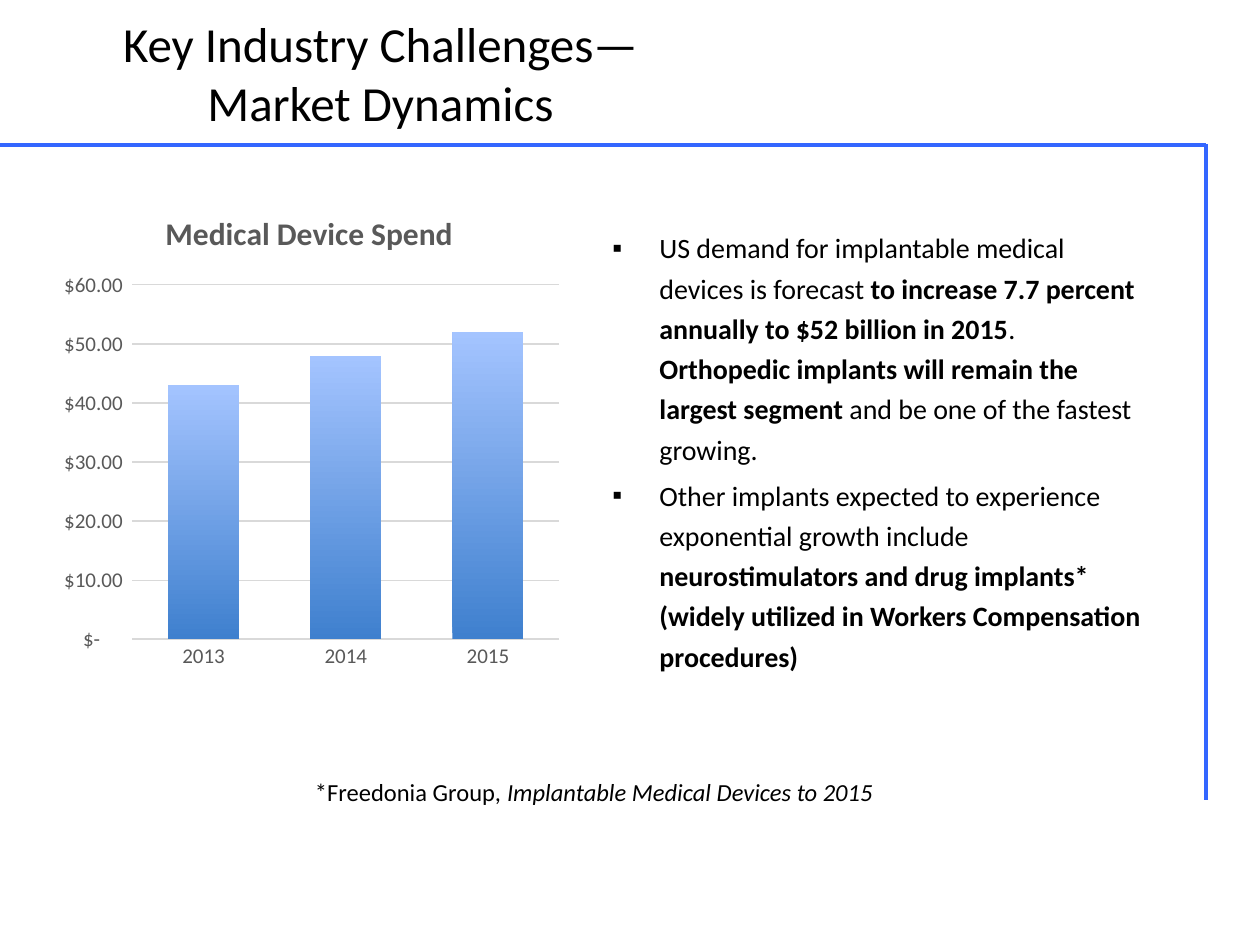
from dataclasses import dataclass

from lxml.etree import SubElement
from pptx import Presentation
from pptx.chart.data import CategoryChartData
from pptx.dml.color import RGBColor
from pptx.enum.chart import XL_CHART_TYPE as ChartType, XL_TICK_MARK as TickMark
from pptx.enum.text import MSO_ANCHOR as Anchor, MSO_AUTO_SIZE as AutoSize, PP_ALIGN as Align
from pptx.oxml.ns import qn
from pptx.util import Cm, Pt

COLORS = {
    "text": "000000",
    "rule": "3366FF",
    "label": "595959",
    "grid": "D9D9D9",
    "bar_bottom": "3F80CE",
    "bar_top": "A4C4FF",
}
DOLLARS = r'_("$"* #,##0.00_);_("$"* \(#,##0.00\);_("$"* "-"??_);_(@_)'


@dataclass
class Rule:
    x1: float
    y1: float
    x2: float
    y2: float


@dataclass
class Span:
    text: str
    bold: bool = False
    italic: bool = False


RULES = [Rule(0, 2.92, 24.31, 2.92), Rule(24.31, 2.9, 24.31, 16.13)]

BULLETS = [
    [
        Span("US demand for implantable medical devices is forecast "),
        Span("to increase 7.7 percent annually to $52 billion in 2015", bold=True),
        Span(". "),
        Span("Orthopedic implants will remain the largest segment", bold=True),
        Span(" and be one of the fastest growing."),
    ],
    [
        Span("Other implants expected to experience exponential growth include "),
        Span("neurostimulators and drug implants* (widely utilized in "
             "Workers Compensation procedures)", bold=True),
    ],
]
FOOTNOTE = [Span("*Freedonia Group, "), Span("Implantable Medical Devices to 2015", italic=True)]


def color(name: str) -> RGBColor:
    return RGBColor.from_string(COLORS[name])


def style_font(font, size: int, color_name: str = "text", bold: bool = False,
               italic: bool = False) -> None:
    values = {"name": "Calibri", "size": Pt(size), "bold": bold, "italic": italic}
    for key, value in values.items():
        setattr(font, key, value)
    font.color.rgb = color(color_name)


def place(shape, left: float, top: float, width: float, height: float) -> None:
    values = {"left": left, "top": top, "width": width, "height": height}
    for key, value in values.items():
        setattr(shape, key, Cm(value))


def write_spans(para, spans: list[Span], size: int) -> None:
    for span in spans:
        run = para.add_run()
        run.text = span.text
        style_font(run.font, size, bold=span.bold, italic=span.italic)


def draw_rule(page, rule: Rule) -> None:
    line = page.shapes.add_connector(1, Cm(rule.x1), Cm(rule.y1), Cm(rule.x2), Cm(rule.y2))
    line.line.color.rgb = color("rule")
    line.line.width = Pt(2)
    SubElement(line.element.spPr, qn("a:effectLst"))


def set_bullet(para, char: str, indent: float) -> None:
    props = para._p.get_or_add_pPr()
    props.set("marL", str(Cm(indent)))
    props.set("indent", str(-Cm(indent)))
    SubElement(props, qn("a:buFont"), typeface="Arial")
    SubElement(props, qn("a:buChar"), char=char)


def fill_title(box) -> None:
    place(box, 0, 0, 15.34, 2.92)
    frame = box.text_frame
    frame.auto_size = AutoSize.NONE
    frame.vertical_anchor = Anchor.MIDDLE
    frame.text = "Key Industry Challenges—\vMarket Dynamics"
    para = frame.paragraphs[0]
    para.alignment = Align.CENTER
    for run in para.runs:
        style_font(run.font, 28)


def fill_body(box) -> None:
    place(box, 12.09, 4.39, 11.3, 10.74)
    frame = box.text_frame
    frame.auto_size = AutoSize.NONE
    for index, spans in enumerate(BULLETS):
        para = frame.add_paragraph() if index else frame.paragraphs[0]
        set_bullet(para, "▪", 0.95)
        para.line_spacing = 1.2
        para.space_before = Pt(3.2 if index else 0)
        write_spans(para, spans, 16)


def add_footnote(page) -> None:
    box = page.shapes.add_textbox(Cm(6.1), Cm(15.54), Cm(15.6), Cm(0.86))
    box.text_frame.word_wrap = True
    write_spans(box.text_frame.paragraphs[0], FOOTNOTE, 14)


def add_spend_chart(page) -> None:
    name = "Medical Device Spend"
    data = CategoryChartData()
    data.categories = ["2013", "2014", "2015"]
    data.add_series(name, [43, 48, 52])
    chart = page.shapes.add_chart(ChartType.COLUMN_CLUSTERED, Cm(0.99), Cm(3.81),
                                  Cm(10.49), Cm(9.88), data).chart
    style_font(chart.font, 10)
    chart.has_legend = False
    chart.has_title = True
    title = chart.chart_title.text_frame
    title.text = name
    style_font(title.paragraphs[0].runs[0].font, 18, "label", bold=True)

    for axis in (chart.category_axis, chart.value_axis):
        axis.major_tick_mark = axis.minor_tick_mark = TickMark.NONE
        style_font(axis.tick_labels.font, 12, "label")
    chart.category_axis.format.line.color.rgb = color("grid")
    chart.category_axis.format.line.width = Pt(1)

    values = chart.value_axis
    scale = {"minimum_scale": 0, "maximum_scale": 60, "major_unit": 10}
    for key, value in scale.items():
        setattr(values, key, value)
    values.format.line.fill.background()
    values.major_gridlines.format.line.color.rgb = color("grid")
    values.major_gridlines.format.line.width = Pt(0.75)
    values.tick_labels.number_format = DOLLARS
    values.tick_labels.number_format_is_linked = False

    plot = chart.plots[0]
    plot.vary_by_categories = False
    plot.gap_width = 100
    plot.overlap = -24
    fill = plot.series[0].format.fill
    fill.gradient()
    fill.gradient_angle = 90
    for stop, color_name in zip(fill.gradient_stops, ("bar_bottom", "bar_top")):
        stop.color.rgb = color(color_name)


def main() -> None:
    deck = Presentation()
    deck.slide_width, deck.slide_height = Cm(25.4), Cm(19.05)
    page = deck.slides.add_slide(deck.slide_layouts[1])
    for rule in RULES:
        draw_rule(page, rule)
    fill_title(page.shapes.title)
    fill_body(page.placeholders[1])
    add_footnote(page)
    add_spend_chart(page)
    deck.save("out.pptx")


if __name__ == "__main__":
    main()
